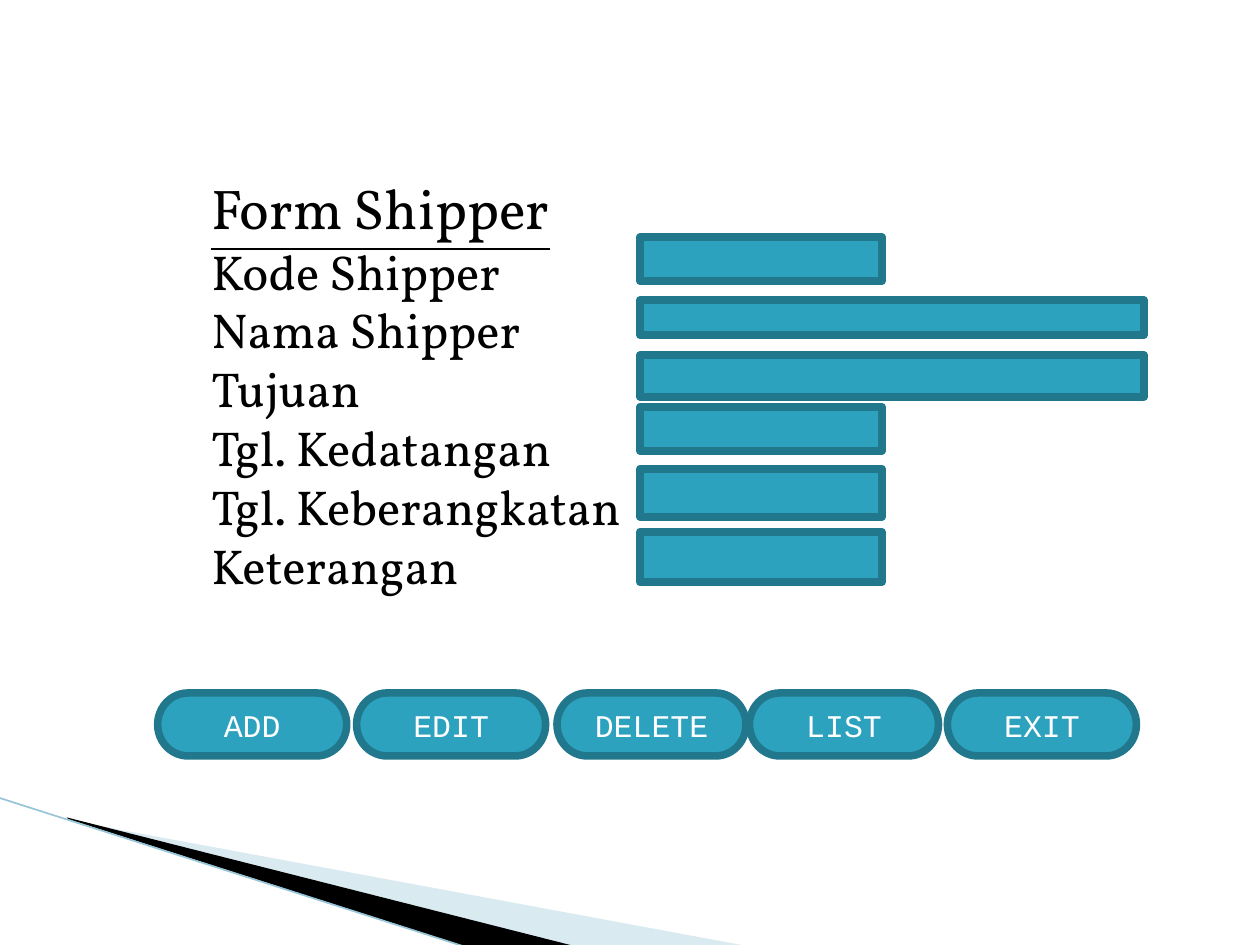
from dataclasses import dataclass
from lxml import etree
from pptx import Presentation
from pptx.dml.color import RGBColor
from pptx.enum import shapes, text
from pptx.oxml.ns import qn
from pptx.util import Cm, Pt


@dataclass(frozen=True)
class Theme:
    fill: str = "2DA2BF"
    border: str = "21788D"
    pale: str = "A0CBDC"
    edge: str = "97C5D8"
    ink: str = "000000"
    paper: str = "FFFFFF"
    body_font: str = "Vollkorn"
    button_font: str = "Courier New"
    title_pt: float = 32
    label_pt: float = 28
    button_pt: float = 18
    border_pt: float = 4.33
    edge_pt: float = 0.95


T = Theme()
TITLE = "Form Shipper"
SHORT, LONG = 4.88, 10.16
# label, field top, field width, field height (cm)
FIELDS = [
    ("Kode Shipper", 4.78, SHORT, 0.89),
    ("Nama Shipper", 6.05, LONG, 0.71),
    ("Tujuan", 7.16, LONG, 0.84),
    ("Tgl. Kedatangan", 8.2, SHORT, 0.89),
    ("Tgl. Keberangkatan", 9.45, SHORT, 0.97),
    ("Keterangan", 10.72, SHORT, 1.02),
]
FIELD_LEFT = 12.9
# caption, left (cm)
BUTTONS = [("ADD", 3.18), ("EDIT", 7.19), ("DELETE", 11.23),
           ("LIST", 15.11), ("EXIT", 19.1)]
BUTTON_TOP, BUTTON_W, BUTTON_H = 13.97, 3.81, 1.27
# corner points (cm), colour, opacity in percent
WEDGES = [
    ([(1.4, 16.54), (15.11, 19.08), (11.58, 19.08), (1.4, 16.51)], T.pale, 40),
    ([(1.35, 16.48), (11.61, 19.08), (9.45, 19.1), (1.37, 16.51)], T.ink, 100),
]
EDGE = (-0.03, 16.08, 9.42, 19.1)


def rgb(value):
    return RGBColor.from_string(value)


def style_run(p, font, size, color):
    f = p.runs[0].font
    f.name, f.size = font, Pt(size)
    f.color.rgb = rgb(color)
    return f


def add_wedge(s, points, color, opacity):
    pts = [(Cm(x), Cm(y)) for x, y in points]
    fb = s.shapes.build_freeform(*pts[0], scale=1.0)
    fb.add_line_segments(pts[1:], close=True)
    sp = fb.convert_to_shape()
    sp.shadow.inherit = False
    sp.fill.solid()
    sp.fill.fore_color.rgb = rgb(color)
    sp.line.fill.background()
    if opacity < 100:
        clr = sp.fill._xPr.find(qn("a:solidFill"))[0]
        etree.SubElement(clr, qn("a:alpha"), val=str(opacity * 1000))


def add_edge(s):
    cx = s.shapes.add_connector(shapes.MSO_CONNECTOR.STRAIGHT, *map(Cm, EDGE))
    cx.line.color.rgb = rgb(T.edge)
    cx.line.width = Pt(T.edge_pt)
    etree.SubElement(cx._element.spPr, qn("a:effectLst"))


def add_box(s, kind, *box):
    sp = s.shapes.add_shape(kind, *map(Cm, box))
    sp.shadow.inherit = False
    sp.fill.solid()
    sp.fill.fore_color.rgb = rgb(T.fill)
    sp.line.color.rgb = rgb(T.border)
    sp.line.width = Pt(T.border_pt)
    return sp


def add_labels(s):
    tf = s.shapes.add_textbox(Cm(4.01), Cm(3.38), Cm(15.04), Cm(10)).text_frame
    tf.word_wrap = True
    tf.text = "\n".join([TITLE] + [label for label, *_ in FIELDS])
    title, *labels = tf.paragraphs
    style_run(title, T.body_font, T.title_pt, T.ink).underline = True
    for p in labels:
        style_run(p, T.body_font, T.label_pt, T.ink)


def add_button(s, caption, left):
    sp = add_box(s, shapes.MSO_SHAPE.FLOWCHART_TERMINATOR,
                 left, BUTTON_TOP, BUTTON_W, BUTTON_H)
    tf = sp.text_frame
    tf.text = caption
    tf.vertical_anchor = text.MSO_ANCHOR.MIDDLE
    p = tf.paragraphs[0]
    p.alignment = text.PP_ALIGN.CENTER
    style_run(p, T.button_font, T.button_pt, T.paper)


def main():
    prs = Presentation()
    prs.slide_width, prs.slide_height = Cm(25.4), Cm(19.05)
    s = prs.slides.add_slide(prs.slide_layouts[6])
    for wedge in WEDGES:
        add_wedge(s, *wedge)
    add_edge(s)
    add_labels(s)
    for _, top, width, height in FIELDS:
        add_box(s, shapes.MSO_SHAPE.RECTANGLE, FIELD_LEFT, top, width, height)
    for button in BUTTONS:
        add_button(s, *button)
    prs.save("out.pptx")


if __name__ == "__main__":
    main()
